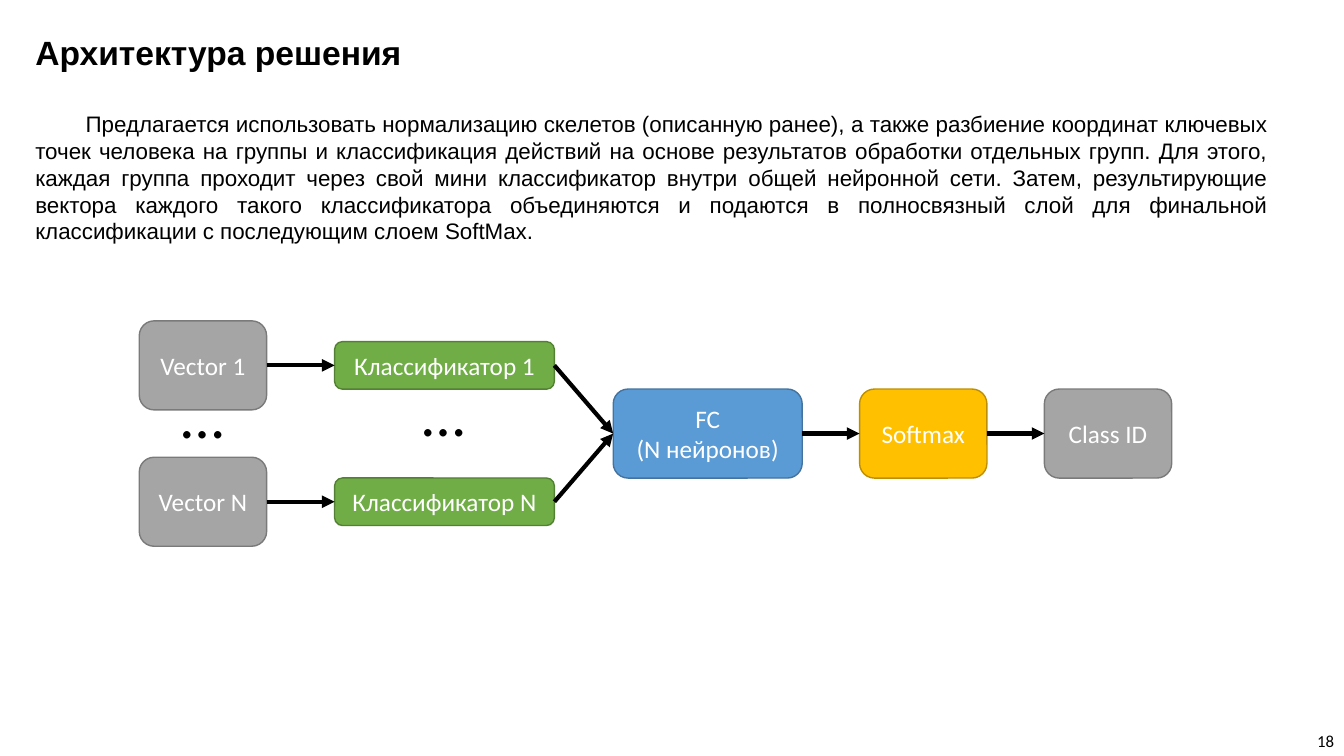
from pptx import Presentation
from pptx.dml.color import RGBColor
from pptx.enum.shapes import MSO_CONNECTOR, MSO_SHAPE
from pptx.enum.text import MSO_ANCHOR, MSO_AUTO_SIZE, PP_ALIGN
from pptx.oxml.ns import qn
from pptx.util import Pt
from lxml import etree

ROUND, STRAIGHT = MSO_SHAPE.ROUNDED_RECTANGLE, MSO_CONNECTOR.STRAIGHT
TOP, MIDDLE = MSO_ANCHOR.TOP, MSO_ANCHOR.MIDDLE
LEFT, CENTER = PP_ALIGN.LEFT, PP_ALIGN.CENTER
RIGHT, JUSTIFY = PP_ALIGN.RIGHT, PP_ALIGN.JUSTIFY
NO_FIT, GROW = MSO_AUTO_SIZE.NONE, MSO_AUTO_SIZE.SHAPE_TO_FIT_TEXT
LEFT_SIDE, RIGHT_SIDE = 1, 3

# Content
TITLE = "Архитектура решения"
BODY = (
    "Предлагается использовать нормализацию скелетов (описанную ранее), "
    "а также разбиение координат ключевых точек человека на группы и "
    "классификация действий на основе результатов обработки отдельных групп. "
    "Для этого, каждая группа проходит через свой мини классификатор внутри "
    "общей нейронной сети. Затем, результирующие вектора каждого такого "
    "классификатора объединяются и подаются в полносвязный слой для финальной "
    "классификации с последующим слоем SoftMax."
)
PAGE = "18"
DOTS = "…"

# Column: left, width, height, colour
COLS = {
    "vector": (99.5, 91, 63.6, "gray"),
    "model": (239, 157, 34, "green"),
    "dense": (438, 135, 63.6, "blue"),
    "soft": (614, 91, 63.6, "gold"),
    "class": (746, 91, 63.6, "gray"),
}
# Node: column, row (-1 upper, 0 middle, 1 lower), lines
NODES = {
    "v1": ("vector", -1, ["Vector 1"]),
    "vn": ("vector", 1, ["Vector N"]),
    "m1": ("model", -1, ["Классификатор 1"]),
    "mn": ("model", 1, ["Классификатор N"]),
    "fc": ("dense", 0, ["FC", "(N нейронов)"]),
    "sm": ("soft", 0, ["Softmax"]),
    "id": ("class", 0, ["Class ID"]),
}
LINKS = [("v1", "m1"), ("vn", "mn"), ("m1", "fc"), ("mn", "fc"),
         ("fc", "sm"), ("sm", "id")]
GAPS = [("vector", 265.7), ("model", 264.2)]

MID, STEP = 309.7, 48.7

THEME = {
    "head": "Arial", "text": "Calibri",
    "black": "000000", "white": "FFFFFF",
    "gray": ("A5A5A5", "7A7A7A"), "green": ("70AD47", "538035"),
    "blue": ("5B9BD5", "43739E"), "gold": ("FFC000", "BD8E00"),
    "title": 24, "body": 16, "node": 18, "dots": 44, "page": 12,
    "edge": 1, "arrow": 3,
}


def rgb(code):
    return RGBColor.from_string(code)


def place(shape, left, top, width, height):
    shape.left, shape.top = Pt(left), Pt(top)
    shape.width, shape.height = Pt(width), Pt(height)


def write(shape, lines, size, align, font="text", color="black",
          anchor=TOP, bold=False, wrap=True, fit=NO_FIT):
    frame = shape.text_frame
    frame.word_wrap, frame.auto_size = wrap, fit
    frame.vertical_anchor = anchor
    for i, line in enumerate(lines):
        para = frame.add_paragraph() if i else frame.paragraphs[0]
        para.alignment = align
        para.space_before = Pt(0)
        run = para.add_run()
        run.text = line
        run.font.name, run.font.size = THEME[font], Pt(THEME[size])
        run.font.bold = bold
        run.font.color.rgb = rgb(THEME[color])


def add_node(shapes, col, row, lines):
    left, width, height, hue = COLS[col]
    top = MID + row * STEP - height / 2
    node = shapes.add_shape(ROUND, Pt(left), Pt(top), Pt(width), Pt(height))
    fill, edge = THEME[hue]
    node.shadow.inherit = False
    node.fill.solid()
    node.fill.fore_color.rgb = rgb(fill)
    node.line.color.rgb = rgb(edge)
    node.line.width = Pt(THEME["edge"])
    write(node, lines, "node", CENTER, color="white", anchor=MIDDLE)
    return node


def add_link(shapes, start, end):
    link = shapes.add_connector(STRAIGHT, 0, 0, 0, 0)
    link.begin_connect(start, RIGHT_SIDE)
    link.end_connect(end, LEFT_SIDE)
    link.line.color.rgb = rgb(THEME["black"])
    link.line.width = Pt(THEME["arrow"])
    props = link._element.spPr
    etree.SubElement(props.find(qn("a:ln")), qn("a:tailEnd"), type="triangle")
    etree.SubElement(props, qn("a:effectLst"))


def main():
    deck = Presentation()
    deck.slide_width, deck.slide_height = Pt(960), Pt(540)
    slide = deck.slides.add_slide(deck.slide_layouts[1])
    shapes = slide.shapes

    # Title
    title = shapes.title
    place(title, 18, 19.4, 279, 36)
    write(title, [TITLE], "title", LEFT, font="head", bold=True, wrap=False)

    # Body with a first-line indent and no bullet
    body = slide.placeholders[1]
    place(body, 18, 75, 895, 104.4)
    write(body, [BODY], "body", JUSTIFY, font="head")
    props = body.text_frame.paragraphs[0]._p.get_or_add_pPr()
    props.set("marL", "0")
    props.set("indent", str(Pt(36)))
    etree.SubElement(props, qn("a:buNone"))

    # Network blocks and arrows
    nodes = {key: add_node(shapes, *node) for key, node in NODES.items()}
    for start, end in LINKS:
        add_link(shapes, nodes[start], nodes[end])

    # Dots between the rows
    for col, top in GAPS:
        left, width = COLS[col][:2]
        box = shapes.add_textbox(Pt(left + width / 2 - 22.7), Pt(top),
                                 Pt(45.4), Pt(60.5))
        write(box, [DOTS], "dots", LEFT, wrap=False, fit=GROW)

    # Page number
    page = shapes.add_textbox(Pt(744), Pt(515), Pt(216), Pt(28.8))
    write(page, [PAGE], "page", RIGHT, anchor=MIDDLE)

    deck.save("out.pptx")


if __name__ == "__main__":
    main()
